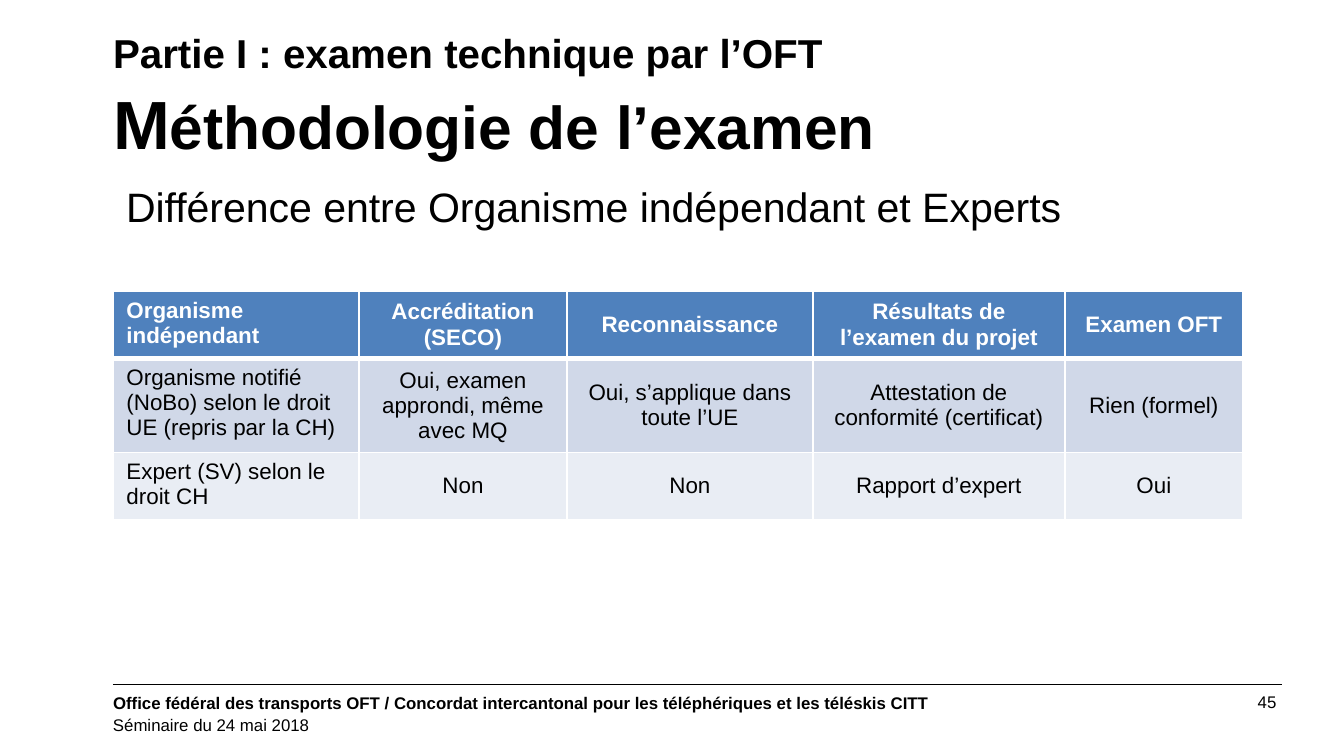
"""Build a slide that compares independent bodies and experts."""
from lxml import etree
from pptx import Presentation
from pptx.dml.color import RGBColor
from pptx.enum.shapes import MSO_CONNECTOR
from pptx.enum.text import MSO_ANCHOR, PP_ALIGN
from pptx.oxml.ns import qn
from pptx.util import Emu, Pt

LEFT, CENTER, RIGHT = PP_ALIGN.LEFT, PP_ALIGN.CENTER, PP_ALIGN.RIGHT
TOP, MIDDLE = MSO_ANCHOR.TOP, MSO_ANCHOR.MIDDLE
STRAIGHT = MSO_CONNECTOR.STRAIGHT
EMU_PER_PX = 914400 / 134.4
FONT = "Arial"
BLACK, WHITE = "000000", "FFFFFF"
MARGIN = 113
CONTENT_W = 1169
COLUMN_WIDTHS = [246, 208, 246, 252, 178]
ROW_HEIGHTS = [63, 89, 63]
ROW_FILLS = ["4F81BD", "D0D8E8", "E9EDF4"]
ROWS = [
    ["Organisme indépendant", "Accréditation (SECO)", "Reconnaissance",
     "Résultats de l’examen du projet", "Examen OFT"],
    ["Organisme notifié (NoBo) selon le droit UE (repris par la CH)",
     "Oui, examen approndi, même avec MQ", "Oui, s’applique dans toute l’UE",
     "Attestation de conformité (certificat)", "Rien (formel)"],
    ["Expert (SV) selon le droit CH", "Non", "Non", "Rapport d’expert", "Oui"],
]


def px(n):
    """Convert pixels to EMU."""
    return Emu(round(n * EMU_PER_PX))


def rgb(value):
    """Turn a hex string into a colour."""
    return RGBColor.from_string(value)


def add_run(p, text, size=9, color=BLACK, bold=False):
    """Append a formatted run to a paragraph."""
    r = p.add_run()
    r.text = text
    r.font.name = FONT
    r.font.size = Pt(size)
    r.font.bold = bold
    r.font.color.rgb = rgb(color)


def add_box(s, x, y, w, h, inset=0, anchor=TOP, align=LEFT, spacing=None):
    """Add an empty text box and return its first paragraph."""
    tf = s.shapes.add_textbox(px(x), px(y), px(w), px(h)).text_frame
    tf.word_wrap = True
    tf.vertical_anchor = anchor
    tf.margin_left = tf.margin_right = px(inset)
    tf.margin_top = tf.margin_bottom = px(inset / 2)
    p = tf.paragraphs[0]
    p.alignment = align
    p.line_spacing = spacing
    return p


def add_rule(s, x, y, w):
    """Draw a thin horizontal line."""
    line = s.shapes.add_connector(STRAIGHT, px(x), px(y), px(x + w), px(y))
    line.line.color.rgb = rgb(BLACK)
    line.line.width = Pt(0.5)
    etree.SubElement(line._element.spPr, qn("a:effectLst"))


def set_borders(cell, **widths):
    """Give a cell white borders with widths in points by side."""
    tc_pr = cell._tc.get_or_add_tcPr()
    for i, side in enumerate("LRTB"):
        ln = etree.Element(qn("a:ln" + side), w=str(Pt(widths.get(side, 1))))
        fill = etree.SubElement(ln, qn("a:solidFill"))
        etree.SubElement(fill, qn("a:srgbClr"), val=WHITE)
        tc_pr.insert(i, ln)


def fill_cell(cell, text, row, col):
    """Write and format one table cell."""
    header = row == 0
    cell.fill.solid()
    cell.fill.fore_color.rgb = rgb(ROW_FILLS[row])
    cell.vertical_anchor = MIDDLE if col else TOP
    p = cell.text_frame.paragraphs[0]
    p.alignment = CENTER if col else LEFT
    add_run(p, text, size=12, color=WHITE if header else BLACK, bold=header)
    set_borders(cell, T=3 if row == 1 else 1, B=3 if header else 1)


def add_comparison_table(s, x, y):
    """Add the table of bodies and experts."""
    table = s.shapes.add_table(len(ROWS), len(COLUMN_WIDTHS), px(x), px(y),
                               px(sum(COLUMN_WIDTHS)), px(sum(ROW_HEIGHTS))).table
    for column, width in zip(table.columns, COLUMN_WIDTHS):
        column.width = px(width)
    for i, texts in enumerate(ROWS):
        table.rows[i].height = px(ROW_HEIGHTS[i])
        for j, text in enumerate(texts):
            fill_cell(table.cell(i, j), text, i, j)


def add_title(s):
    """Add the two-line title."""
    p = add_box(s, MARGIN, 26, CONTENT_W, 137, anchor=MIDDLE, spacing=1.05)
    add_run(p, "Partie I : examen technique par l’OFT", size=21.6, bold=True)
    p.add_line_break()
    add_run(p, "M", size=36.5, bold=True)
    add_run(p, "éthodologie de l’examen", size=32.4, bold=True)


def add_footer(s):
    """Add the rule, the footer lines and the page number."""
    add_rule(s, MARGIN, 685, CONTENT_W)
    add_run(add_box(s, MARGIN, 693, 1047, 20),
            "Office fédéral des transports OFT / Concordat intercantonal "
            "pour les téléphériques et les téléskis CITT", bold=True)
    add_run(add_box(s, MARGIN, 715, 222, 20), "Séminaire du 24 mai 2018")
    add_run(add_box(s, 948, 691, 333, 22, align=RIGHT, spacing=1.05), "45 ")


def main():
    """Build and save the slide."""
    prs = Presentation()
    prs.slide_width, prs.slide_height = px(1344), px(756)
    s = prs.slides.add_slide(prs.slide_layouts[6])
    add_footer(s)
    add_run(add_box(s, MARGIN, 176, CONTENT_W, 487, inset=13, spacing=Pt(26)),
            "Différence entre Organisme indépendant et Experts", size=22)
    add_comparison_table(s, MARGIN, 291)
    add_title(s)
    prs.save("out.pptx")


if __name__ == "__main__":
    main()
